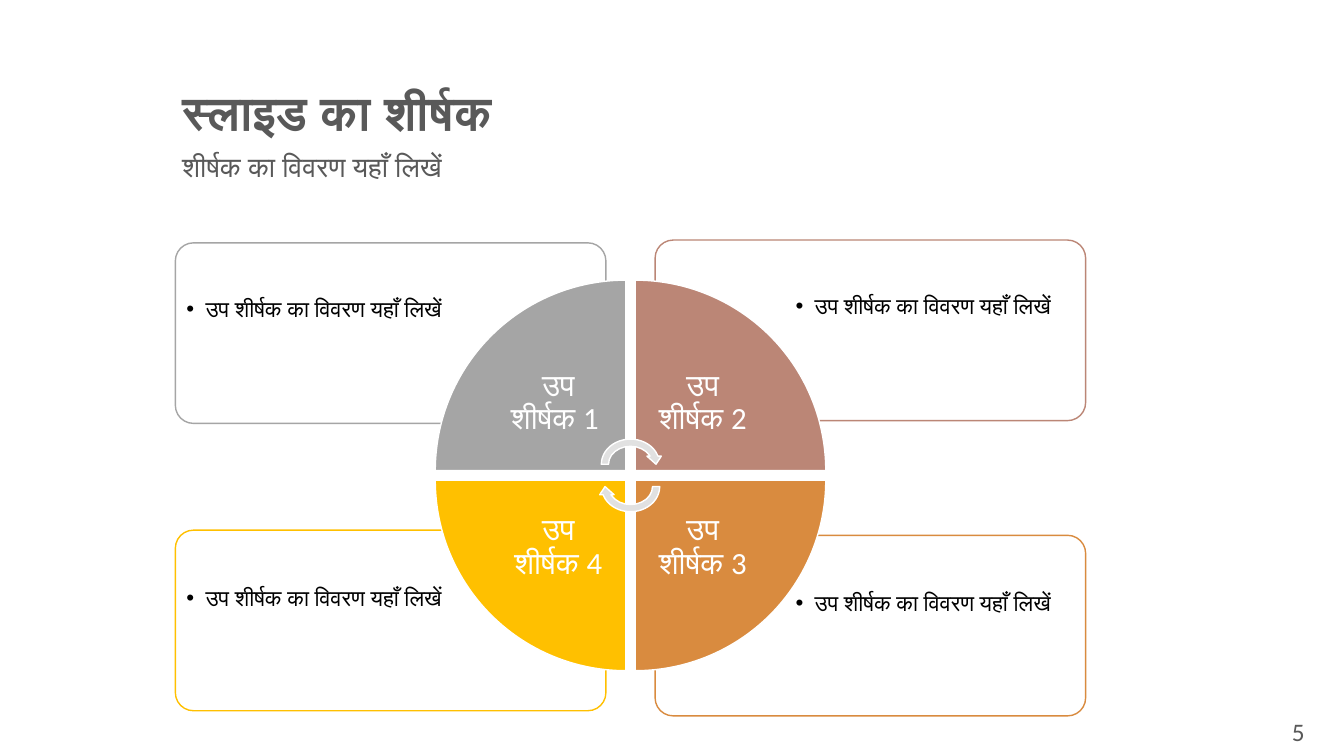
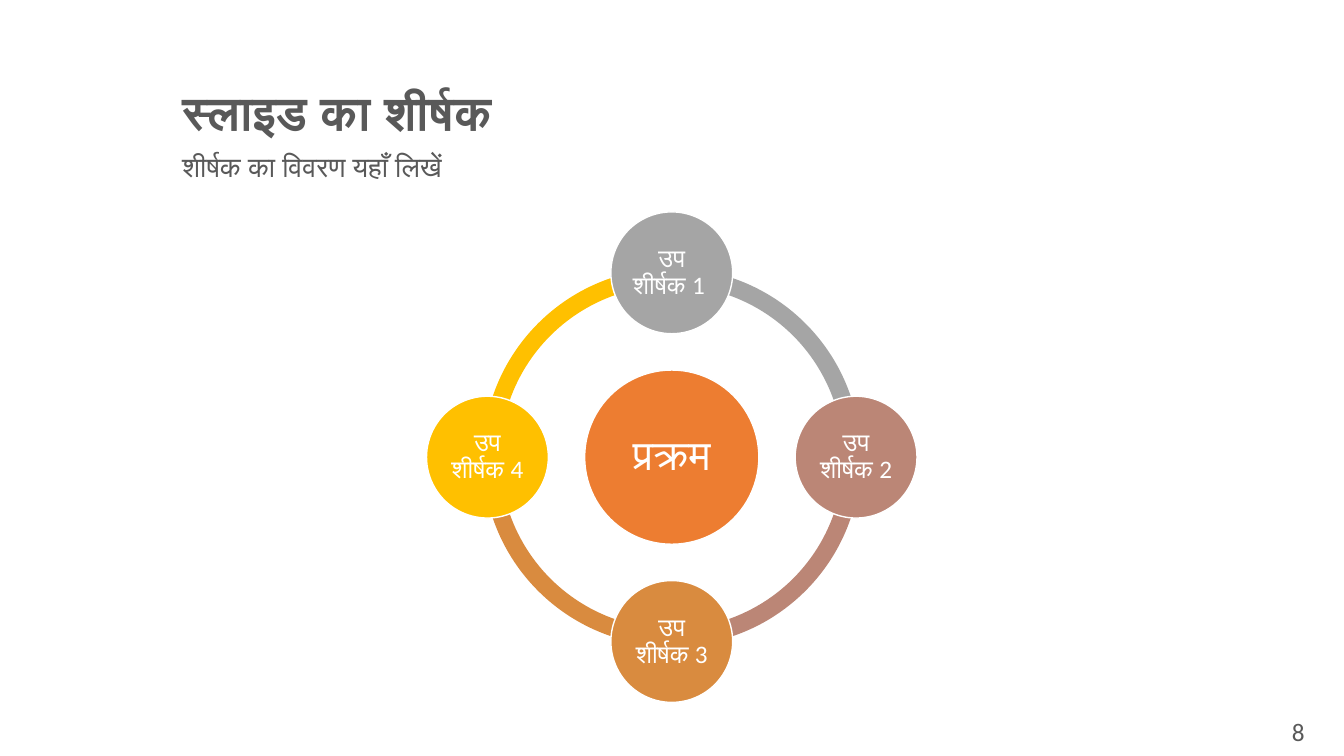
from math import cos, radians, sin

from lxml import etree
from pptx import Presentation
from pptx import util as u
from pptx.dml.color import RGBColor
from pptx.enum import shapes, text
from pptx.oxml.ns import qn

Cm, Pt = u.Cm, u.Pt
SHAPE, ALIGN, ANCHOR = shapes.MSO_SHAPE, text.PP_ALIGN, text.MSO_ANCHOR

FONT = "Calibri"
COLORS = {
    "white": "FFFFFF", "black": "000000", "heading": "595959",
    "grey": "A5A5A5", "rose": "BB8676", "ochre": "D98B3F", "gold": "FFC000",
    "hub": "ED7D31", "arrow": "E1E1E1",
}
TITLE = "स्लाइड का शीर्षक"
SUBTITLE = "शीर्षक का विवरण यहाँ लिखें"
DETAIL = "उप शीर्षक का विवरण यहाँ लिखें"
# Clockwise, starting at the top (or top left)
TOPICS = [("उप शीर्षक 1 ", "grey"), ("उप शीर्षक 2", "rose"),
          ("उप शीर्षक 3", "ochre"), ("उप शीर्षक 4", "gold")]


def rgb(name):
    return RGBColor.from_string(COLORS[name])


def box_cm(*lengths):
    return [Cm(n) for n in lengths]


def write(tf, content, size, color="white", bold=False, align=ALIGN.CENTER,
          anchor=ANCHOR.MIDDLE, margins=(0.25, 0.13), bullet=False, spacing=0.9):
    """Fill a text frame with one paragraph; margins are (sides, top and bottom)."""
    tf.word_wrap = True
    tf.auto_size = text.MSO_AUTO_SIZE.NONE
    tf.vertical_anchor = anchor
    tf.margin_left = tf.margin_right = Cm(margins[0])
    tf.margin_top = tf.margin_bottom = Cm(margins[1])
    p = tf.paragraphs[0]
    p.alignment = align
    p.line_spacing = spacing
    p.space_before = Pt(0)
    if bullet:
        pPr = p._p.get_or_add_pPr()
        pPr.set("marL", str(Cm(0.48)))
        pPr.set("indent", str(-Cm(0.48)))
        etree.SubElement(pPr, qn("a:buFont")).set("typeface", "Arial")
        etree.SubElement(pPr, qn("a:buChar")).set("char", "•")
    r = p.add_run()
    r.text = content
    r.font.name, r.font.size, r.font.bold = FONT, Pt(size), bold
    r.font.color.rgb = rgb(color)


def add_text(slide, box, content, size, **style):
    write(slide.shapes.add_textbox(*box_cm(*box)).text_frame, content, size, **style)


def add_shape(slide, kind, box, fill, line=None, rotation=0, adjust=()):
    sp = slide.shapes.add_shape(kind, *box_cm(*box))
    sp.shadow.inherit = False
    sp.rotation = rotation
    sp.fill.solid()
    sp.fill.fore_color.rgb = rgb(fill)
    if line:
        sp.line.color.rgb = rgb(line)
        sp.line.width = Pt(1)
    else:
        sp.line.fill.background()
    for i, value in enumerate(adjust):
        sp.adjustments[i] = value
    return sp


def add_base_slide(prs, number):
    """Add a slide with the shared title, subtitle and page number."""
    slide = prs.slides.add_slide(prs.slide_layouts[5])
    title = slide.shapes.title
    title.left, title.top, title.width, title.height = box_cm(4.34, 2.13, 24.41, 1.4)
    heading = dict(color="heading", align=ALIGN.LEFT, anchor=ANCHOR.TOP)
    write(title.text_frame, TITLE, 34, bold=True, **heading)
    add_text(slide, (4.34, 3.73, 24.41, 1.6), SUBTITLE, 20, **heading)
    add_text(slide, (31.55, 17.93, 2.34, 1.12), str(number), 18, color="heading",
             anchor=ANCHOR.TOP, spacing=1.0)
    return slide


def add_panel(slide, box, color, right, bottom):
    """Outlined panel whose bullet sits in its outer corner."""
    left, top, width, height = box
    text_w, text_h, pad = 7.39, 3.2, 0.1
    add_shape(slide, SHAPE.ROUNDED_RECTANGLE, box, "white", color, adjust=[0.1])
    x = left + (width - text_w - pad if right else pad)
    y = top + (height - text_h - pad if bottom else pad)
    add_text(slide, (x, y, text_w, text_h), DETAIL, 16, color="black", align=ALIGN.LEFT,
             anchor=ANCHOR.TOP if bottom else ANCHOR.MIDDLE,
             margins=(0.18, 0.18), bullet=True)


def add_wedge(slide, center, index, right, bottom):
    """Quarter of the wheel, with its label against the inner corner."""
    size, label, half_gap = 4.8, 3.4, 0.12
    content, color = TOPICS[index]

    def inner_box(side):
        x, y = (c + half_gap if after else c - half_gap - side
                for c, after in zip(center, (right, bottom)))
        return x, y, side, side

    add_shape(slide, SHAPE.PIE_WEDGE, inner_box(size), color, "white", 90 * index)
    add_text(slide, inner_box(label), content, 22, margins=(0.43, 0.43))


def add_cycle_matrix(slide, box):
    left, top, width, height = box
    center = left + width / 2, top + height / 2
    panel_w, panel_h = 10.85, 4.55
    quadrants = [(False, False), (True, False), (True, True), (False, True)]
    panel_tops = [0.19, 0.12, 7.56, 7.43]
    for i in reversed(range(4)):
        right, bottom = quadrants[i]
        x = left + (width - panel_w if right else 0)
        add_panel(slide, (x, top + panel_tops[i], panel_w, panel_h),
                  TOPICS[i][1], right, bottom)
    for i, (right, bottom) in enumerate(quadrants):
        add_wedge(slide, center, i, right, bottom)
    arrow_w, arrow_h = 1.65, 1.45
    for shift, rotation in ((-0.28, 0), (0.28, 180)):
        add_shape(slide, SHAPE.CIRCULAR_ARROW,
                  (center[0] - arrow_w / 2, center[1] + shift - arrow_h / 2,
                   arrow_w, arrow_h), "arrow", "white", rotation)


def add_disc(slide, x, y, diameter, color, content, size):
    box = x - diameter / 2, y - diameter / 2, diameter, diameter
    sp = add_shape(slide, SHAPE.OVAL, box, color, "white")
    write(sp.text_frame, content, size, margins=(0.08, 0.08))


def add_radial_cycle(slide, box):
    left, top, size, _ = box
    x, y = left + size / 2, top + size / 2
    ring, node, hub = 9.53, 3.07, 4.39
    orbit = (size - node) / 2
    angles = [270, 0, 90, 180]
    degree = 0.6  # adjustment units in one degree
    for angle, (_, color) in reversed(list(zip(angles, TOPICS))):
        add_shape(slide, SHAPE.BLOCK_ARC, (x - ring / 2, y - ring / 2, ring, ring), color,
                  adjust=[angle * degree, (angle + 90) % 360 * degree, 0.046])
    add_disc(slide, x, y, hub, "hub", "प्रक्रम", 30)
    for angle, (content, color) in zip(angles, TOPICS):
        a = radians(angle)
        add_disc(slide, x + orbit * cos(a), y + orbit * sin(a), node, color, content, 18)


def main():
    prs = Presentation()
    prs.slide_width, prs.slide_height = Cm(33.87), Cm(19.05)
    add_cycle_matrix(add_base_slide(prs, 5), (4.42, 5.93, 22.94, 12.1))
    add_radial_cycle(add_base_slide(prs, 8), (10.75, 5.34, 12.36, 12.36))
    prs.save("out.pptx")


if __name__ == "__main__":
    main()
